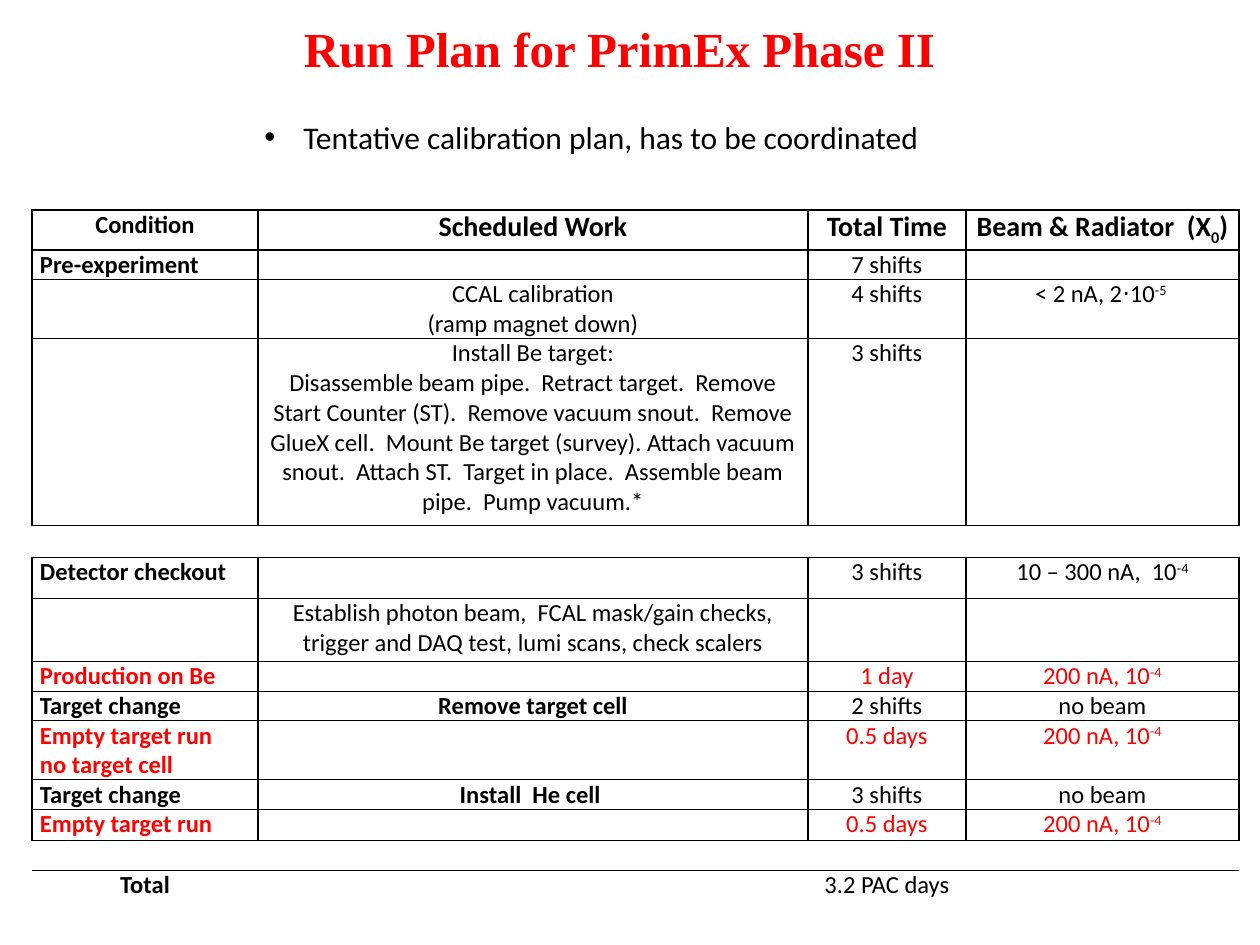
"""Build the run plan slide with its schedule table."""
from lxml import etree
from pptx import Presentation
from pptx.dml.color import RGBColor
from pptx.enum.text import MSO_ANCHOR, PP_ALIGN
from pptx.oxml.ns import qn
from pptx.util import Pt

LEFT, MID = PP_ALIGN.LEFT, PP_ALIGN.CENTER
CENTER = MSO_ANCHOR.MIDDLE
PX = 914400 // 126
RED, BLACK, WHITE = "FF0000", "000000", "FFFFFF"
PLAIN = "{2D5ABB26-0587-4C30-8999-92F81FD0307C}"


def paint(target, code):
    target.rgb = RGBColor.from_string(code)


def write(para, text, size, color=BLACK, bold=False, face="Calibri", shift=0):
    for i, part in enumerate(text.split("|")):
        run = para.add_run()
        run.text = part
        form = {"size": Pt(size), "bold": bold, "name": face}
        for key, value in form.items():
            setattr(run.font, key, value)
        paint(run.font.color, color)
        if i % 2:
            run._r.get_or_add_rPr().set("baseline", str(shift))


prs = Presentation()
prs.slide_width, prs.slide_height = 1260 * PX, 945 * PX
slide = prs.slides.add_slide(prs.slide_layouts[6])

title = slide.shapes.add_textbox(84 * PX, 0, 1071 * PX, 95 * PX).text_frame
title.word_wrap = True
title.vertical_anchor = CENTER
para = title.paragraphs[0]
para.alignment = MID
write(para, "Run Plan for PrimEx Phase II", 28, RED, True, "Times New Roman")

note = slide.shapes.add_textbox(252 * PX, 112 * PX, 688 * PX, 51 * PX).text_frame
note.word_wrap = False
para = note.paragraphs[0]
write(para, "Tentative calibration plan, has to be coordinated", 18)
props = para._p.get_or_add_pPr()
for key, value in {"marL": 39 * PX, "indent": -39 * PX}.items():
    props.set(key, str(value))
etree.SubElement(props, qn("a:buFont"), typeface="Arial")
etree.SubElement(props, qn("a:buChar"), char="•")

BEAM = "200 nA, 10|-4"
WORK = (
    "Install Be target:\n"
    "Disassemble beam pipe.  Retract target.  Remove Start Counter (ST).  "
    "Remove vacuum snout.  Remove GlueX cell.  Mount Be target (survey). "
    "Attach vacuum snout.  Attach ST.  Target in place.  Assemble beam pipe.  "
    "Pump vacuum.*"
)
CHECKS = (
    "Establish photon beam,  FCAL mask/gain checks, "
    "trigger and DAQ test, lumi scans, check scalers"
)
rows = [
    (40, "Condition", "Scheduled Work", "Total Time", "Beam & Radiator  (X|0|)"),
    (29, "Pre-experiment", "", "7 shifts", ""),
    (59, "", "CCAL calibration\n(ramp magnet down)", "4 shifts", "< 2 nA, 2⋅10|-5 "),
    (187, "", WORK, "3 shifts", ""),
    (32, "", "", "", ""),
    (41, "Detector checkout", "", "3 shifts", "10 – 300 nA,  10|-4"),
    (63, "", CHECKS, "", ""),
    (30, "Production on Be", "", "1 day", BEAM),
    (29, "Target change", "Remove target cell", "2 shifts", "no beam"),
    (59, "Empty target run\nno target cell", "", "0.5 days", BEAM),
    (30, "Target change", "Install  He cell ", "3 shifts", "no beam"),
    (31, "Empty target run", "", "0.5 days", BEAM),
    (30, "", "", "", ""),
    (41, "Total", "", "3.2 PAC days", ""),
]
widths = [226, 550, 158, 273]
sides = {4: "TB", 12: "T", 13: ""}
high = sum(row[0] for row in rows)
grid = slide.shapes.add_table(
    len(rows), 4, 32 * PX, 210 * PX, sum(widths) * PX, high * PX
).table
grid.first_row = grid.horz_banding = False
grid._tbl.tblPr[0].text = PLAIN
for col, wide in zip(grid.columns, widths):
    col.width = wide * PX

pads = {"margin_left": 8, "margin_right": 8, "margin_top": 0, "margin_bottom": 0}
for r, (tall, *texts) in enumerate(rows):
    grid.rows[r].height = tall * PX
    color = RED if r in (7, 9, 11) else BLACK
    for c, text in enumerate(texts):
        cell = grid.cell(r, c)
        for key, value in pads.items():
            setattr(cell, key, value * PX)
        for side in sides.get(r, "LRTB"):
            line = etree.SubElement(
                cell._tc.get_or_add_tcPr(), qn(f"a:ln{side}"), w=str(Pt(1))
            )
            fill = etree.SubElement(line, qn("a:solidFill"))
            etree.SubElement(fill, qn("a:srgbClr"), val=BLACK)
        cell.fill.solid()
        paint(cell.fill.fore_color, WHITE)
        frame = cell.text_frame
        if not text:
            etree.SubElement(frame.paragraphs[0]._p, qn("a:endParaRPr"), sz="1400")
            continue
        bold = r == 0 or c == 0 or (c == 1 and r in (8, 10))
        size = 16 if r == 0 and c else 14
        for i, words in enumerate(text.split("\n")):
            para = frame.add_paragraph() if i else frame.paragraphs[0]
            para.alignment = LEFT if c == 0 and 0 < r < 13 else MID
            write(para, words, size, color, bold, shift=30000 if r else -25000)

prs.save("out.pptx")
